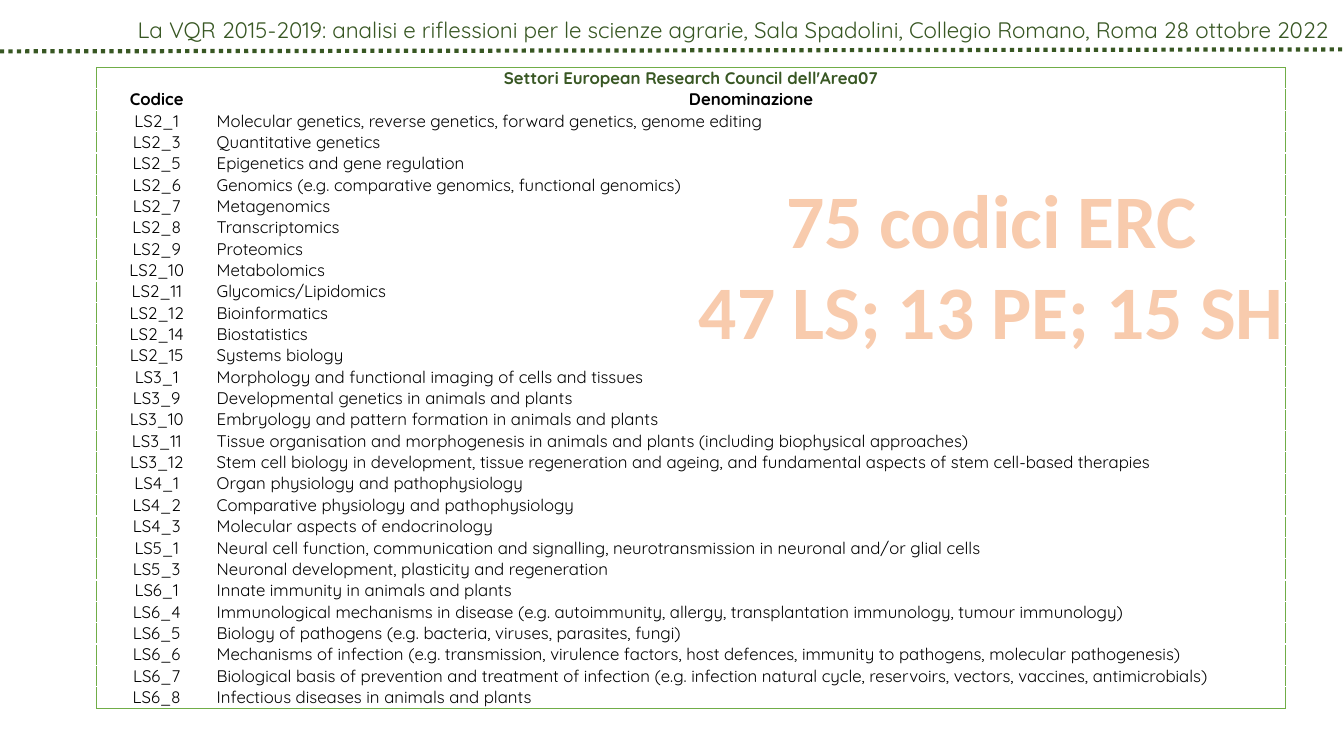
from dataclasses import dataclass

from lxml.etree import SubElement
from pptx import Presentation
from pptx.dml.color import RGBColor
from pptx.enum.dml import MSO_LINE
from pptx.enum.shapes import MSO_CONNECTOR
from pptx.enum.text import MSO_ANCHOR, MSO_AUTO_SIZE, PP_ALIGN
from pptx.oxml import parse_xml
from pptx.oxml.ns import nsdecls, qn
from pptx.util import Inches, Pt


@dataclass(frozen=True)
class Theme:
    body_font: str = "Quicksand"
    callout_font: str = "Calibri"
    dark_green: str = "385723"
    border_green: str = "70AD47"
    black: str = "000000"
    peach: str = "F8CBAD"
    orange: str = "ED7D31"
    header_size: int = 16
    table_size: int = 12
    callout_size: int = 54


THEME = Theme()
HEADER = ("La VQR 2015-2019: analisi e riflessioni per le scienze agrarie, "
          "Sala Spadolini, Collegio Romano, Roma 28 ottobre 2022")
TABLE_TITLE = "Settori European Research Council dell'Area07"
COLUMN_NAMES = ("Codice", "Denominazione")
SECTORS = [
    ("LS2_1", "Molecular genetics, reverse genetics, forward genetics, genome editing"),
    ("LS2_3", "Quantitative genetics"),
    ("LS2_5", "Epigenetics and gene regulation"),
    ("LS2_6", "Genomics (e.g. comparative genomics, functional genomics)"),
    ("LS2_7", "Metagenomics"),
    ("LS2_8", "Transcriptomics"),
    ("LS2_9", "Proteomics"),
    ("LS2_10", "Metabolomics"),
    ("LS2_11", "Glycomics/Lipidomics"),
    ("LS2_12", "Bioinformatics"),
    ("LS2_14", "Biostatistics"),
    ("LS2_15", "Systems biology"),
    ("LS3_1", "Morphology and functional imaging of cells and tissues"),
    ("LS3_9", "Developmental genetics in animals and plants"),
    ("LS3_10", "Embryology and pattern formation in animals and plants"),
    ("LS3_11", "Tissue organisation and morphogenesis in animals and plants "
               "(including biophysical approaches)"),
    ("LS3_12", "Stem cell biology in development, tissue regeneration and ageing, "
               "and fundamental aspects of stem cell-based therapies"),
    ("LS4_1", "Organ physiology and pathophysiology"),
    ("LS4_2", "Comparative physiology and pathophysiology"),
    ("LS4_3", "Molecular aspects of endocrinology"),
    ("LS5_1", "Neural cell function, communication and signalling, "
              "neurotransmission in neuronal and/or glial cells"),
    ("LS5_3", "Neuronal development, plasticity and regeneration"),
    ("LS6_1", "Innate immunity in animals and plants"),
    ("LS6_4", "Immunological mechanisms in disease (e.g. autoimmunity, allergy, "
              "transplantation immunology, tumour immunology)"),
    ("LS6_5", "Biology of pathogens (e.g. bacteria, viruses, parasites, fungi)"),
    ("LS6_6", "Mechanisms of infection (e.g. transmission, virulence factors, "
              "host defences, immunity to pathogens, molecular pathogenesis)"),
    ("LS6_7", "Biological basis of prevention and treatment of infection "
              "(e.g. infection natural cycle, reservoirs, vectors, vaccines, antimicrobials)"),
    ("LS6_8", "Infectious diseases in animals and plants"),
]
CALLOUT = ("75 codici ERC", "47 LS; 13 PE; 15 SH")


def write(para, text, font=THEME.body_font, size=THEME.table_size,
          color=THEME.black, bold=False, align=PP_ALIGN.LEFT):
    para.alignment = align
    span = para.add_run()
    span.text = text
    span.font.name = font
    span.font.size = Pt(size)
    span.font.bold = bold
    span.font.color.rgb = RGBColor.from_string(color)
    return span


def solid_line(tag, color, width):
    return parse_xml(
        f'<a:{tag} {nsdecls("a")} w="{Pt(width)}"><a:solidFill>'
        f'<a:srgbClr val="{color}"/></a:solidFill></a:{tag}>')


def add_header(page):
    title = page.shapes.title
    title.left, title.top = Inches(-0.05), Inches(0.11)
    title.width, title.height = Inches(13.33), Inches(0.37)
    frame = title.text_frame
    frame.word_wrap = True
    frame.vertical_anchor = MSO_ANCHOR.TOP
    frame.auto_size = MSO_AUTO_SIZE.SHAPE_TO_FIT_TEXT
    write(frame.paragraphs[0], HEADER, size=THEME.header_size,
          color=THEME.dark_green, align=PP_ALIGN.RIGHT)


def add_dotted_rule(page):
    rule = page.shapes.add_connector(
        MSO_CONNECTOR.STRAIGHT, Inches(0), Inches(0.51), Inches(13.33), Inches(0.49))
    rule.line.color.rgb = RGBColor.from_string(THEME.dark_green)
    rule.line.width = Pt(3)
    rule.line.dash_style = MSO_LINE.ROUND_DOT
    SubElement(rule._element.spPr, qn("a:effectLst"))


def format_cell(cell, borders):
    """Clear the fill and draw the given border tags, listed in the order lnL, lnR, lnT, lnB."""
    cell.margin_left = cell.margin_top = cell.margin_right = 0
    cell.margin_bottom = Inches(0.01)
    cell.vertical_anchor = MSO_ANCHOR.MIDDLE
    properties = cell._tc.get_or_add_tcPr()
    for tag in borders:
        properties.append(solid_line(tag, THEME.border_green, 0.5))
    cell.fill.background()


def add_sector_table(page):
    rows = [(TABLE_TITLE, ""), COLUMN_NAMES, *SECTORS]
    table = page.shapes.add_table(
        len(rows), 2, Inches(0.96), Inches(0.67), Inches(11.79), Inches(6.36)).table
    table.first_row = table.horz_banding = False
    table.columns[0].width, table.columns[1].width = Inches(1.19), Inches(10.6)
    table.cell(0, 0).merge(table.cell(0, 1))
    last = len(rows) - 1
    for row, texts in enumerate(rows):
        for column, text in enumerate(texts):
            cell = table.cell(row, column)
            borders = ["lnR" if column or row == 0 else "lnL"]
            if row == 0 and column == 0:
                borders.insert(0, "lnL")
            if row == 0:
                borders.append("lnT")
            if row == last:
                borders.append("lnB")
            format_cell(cell, borders)
            heading = row < 2
            centred = heading or column == 0
            write(cell.text_frame.paragraphs[0], text, bold=heading,
                  color=THEME.dark_green if row == 0 else THEME.black,
                  align=PP_ALIGN.CENTER if centred else PP_ALIGN.LEFT)


def add_callout(page):
    box = page.shapes.add_textbox(Inches(6.8), Inches(1.67), Inches(6.07), Inches(1.92))
    frame = box.text_frame
    frame.word_wrap = False
    frame.auto_size = MSO_AUTO_SIZE.SHAPE_TO_FIT_TEXT
    for index, text in enumerate(CALLOUT):
        para = frame.add_paragraph() if index else frame.paragraphs[0]
        span = write(para, text, font=THEME.callout_font, size=THEME.callout_size,
                     color=THEME.peach, bold=True, align=PP_ALIGN.CENTER)
        span._r.get_or_add_rPr().insert(0, solid_line("ln", THEME.orange, 1.75))


def main():
    deck = Presentation()
    deck.slide_width, deck.slide_height = Inches(13.33), Inches(7.5)
    page = deck.slides.add_slide(deck.slide_layouts.get_by_name("Title Only"))
    add_header(page)
    add_dotted_rule(page)
    add_sector_table(page)
    add_callout(page)
    deck.save("out.pptx")


if __name__ == "__main__":
    main()
